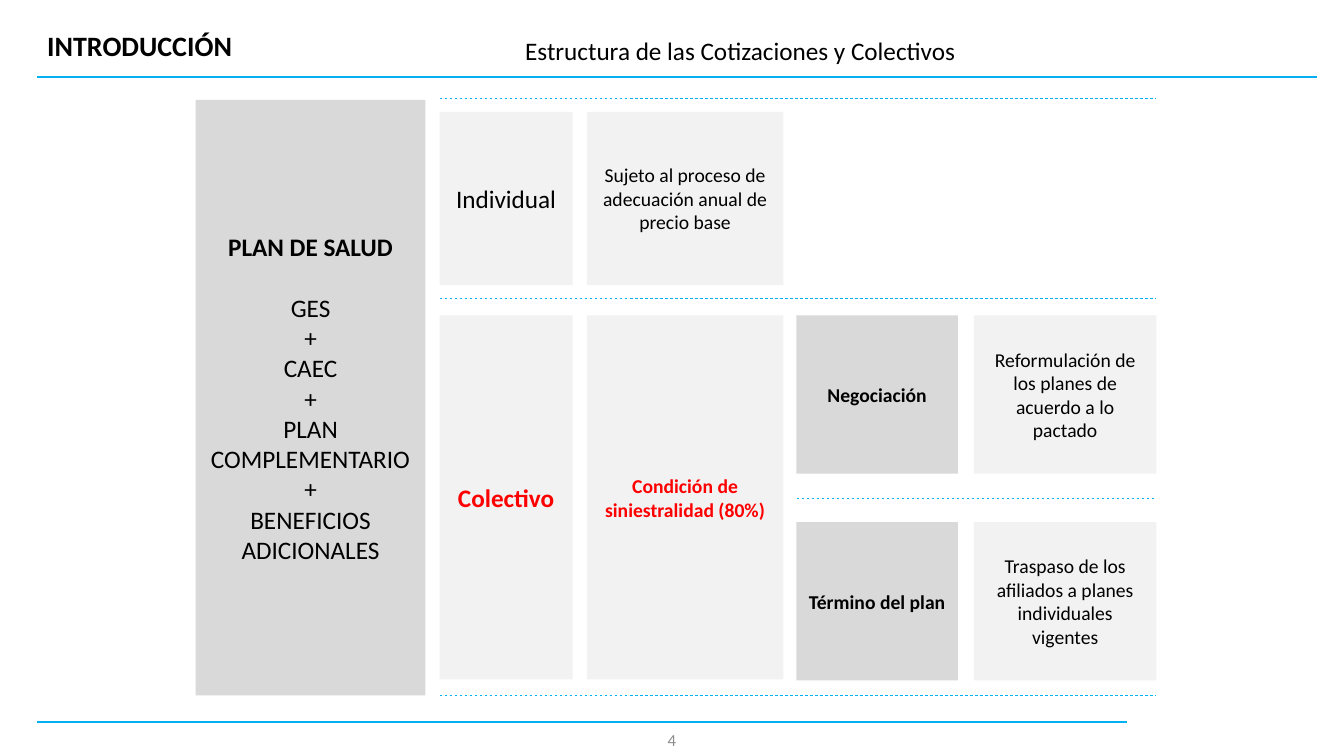
from dataclasses import dataclass

from lxml import etree
from pptx import Presentation
from pptx.dml.color import RGBColor
from pptx.enum.dml import MSO_LINE
from pptx.enum.shapes import MSO_CONNECTOR, MSO_SHAPE
from pptx.enum.text import MSO_ANCHOR, PP_ALIGN
from pptx.oxml.ns import qn
from pptx.slide import Slide
from pptx.text.text import TextFrame
from pptx.util import Inches, Pt

RECT = MSO_SHAPE.RECTANGLE
LINE = MSO_CONNECTOR.STRAIGHT
DASH = MSO_LINE.DASH
TOP, MID = MSO_ANCHOR.TOP, MSO_ANCHOR.MIDDLE
LEFT, MIDDLE = PP_ALIGN.LEFT, PP_ALIGN.CENTER
FONT = "Calibri"
COLORS = {"blue": "00B0F0", "black": "000000", "red": "FF0000",
          "mute": "8C8C8C", "dark": "D9D9D9", "light": "F2F2F2"}


@dataclass
class Label:
    text: str
    left: float
    top: float
    width: float
    height: float
    size: int = 14
    bold: bool = False
    color: str = "black"
    fill: str = "light"
    align: PP_ALIGN = MIDDLE
    anchor: MSO_ANCHOR = MID


@dataclass
class Rule:
    left: float
    right: float
    top: float
    width: float = 0.5
    dashed: bool = True


def paint(name: str) -> RGBColor:
    return RGBColor.from_string(COLORS[name])


def write(frame: TextFrame, label: Label) -> None:
    frame.text = label.text
    frame.word_wrap = True
    frame.vertical_anchor = label.anchor
    for para in frame.paragraphs:
        para.alignment = label.align
        for run in para.runs:
            run.font.name = FONT
            run.font.size = Pt(label.size)
            run.font.bold = label.bold
            run.font.color.rgb = paint(label.color)


def add_text(slide: Slide, label: Label) -> None:
    box = slide.shapes.add_textbox(Inches(label.left), Inches(label.top),
                                   Inches(label.width), Inches(label.height))
    write(box.text_frame, label)


def add_box(slide: Slide, label: Label) -> TextFrame:
    box = slide.shapes.add_shape(RECT, Inches(label.left), Inches(label.top),
                                 Inches(label.width), Inches(label.height))
    box.shadow.inherit = False
    box.fill.solid()
    box.fill.fore_color.rgb = paint(label.fill)
    box.line.fill.background()
    write(box.text_frame, label)
    return box.text_frame


def add_rule(slide: Slide, rule: Rule) -> None:
    line = slide.shapes.add_connector(LINE, Inches(rule.left), Inches(rule.top),
                                      Inches(rule.right), Inches(rule.top))
    line.line.color.rgb = paint("blue")
    line.line.width = Pt(rule.width)
    if rule.dashed:
        line.line.dash_style = DASH
    etree.SubElement(line._element.spPr, qn("a:effectLst"))


KIND, CAUSE, STEP, RESULT = (4.36, 1.32), (5.82, 1.95), (7.9, 1.6), (9.66, 1.81)
SOLO, GROUP, DEAL, CLOSE = (1.11, 1.72), (3.13, 3.61), (3.13, 1.57), (5.18, 1.57)
EDGE = RESULT[0] + RESULT[1]


def cell(text: str, col: tuple[float, float], row: tuple[float, float],
         size: int = 14, bold: bool = False, color: str = "black",
         fill: str = "light") -> Label:
    return Label(text, col[0], row[0], col[1], row[1], size, bold, color, fill)


PLAN = Label("PLAN DE SALUD\nGES\n+\nCAEC\n+\nPLAN COMPLEMENTARIO\n+\n"
             "BENEFICIOS ADICIONALES", 1.94, 0.99, 2.28, 5.91, 18, fill="dark")
CELLS = [
    cell("Individual", KIND, SOLO, 18),
    cell("Sujeto al proceso de adecuación anual de precio base", CAUSE, SOLO),
    cell("Colectivo", KIND, GROUP, 18, True, "red"),
    cell("Condición de siniestralidad (80%)", CAUSE, GROUP, 14, True, "red"),
    cell("Negociación", STEP, DEAL, bold=True, fill="dark"),
    cell("Reformulación de los planes de acuerdo a lo pactado", RESULT, DEAL),
    cell("Término del plan", STEP, CLOSE, bold=True, fill="dark"),
    cell("Traspaso de los afiliados a planes individuales vigentes", RESULT, CLOSE),
]
TEXTS = [
    Label("INTRODUCCIÓN", 0.37, 0.13, 12.3, 0.63, 20, True, align=LEFT),
    Label("Estructura de las Cotizaciones y Colectivos", 5.11, 0.3, 4.91, 0.4,
          18, align=LEFT, anchor=TOP),
    Label("4", 5.11, 7.14, 3.11, 0.4, 12, color="mute"),
]
RULES = [
    Rule(0.37, 13.06, 0.76, 1.5, False),
    Rule(0.37, 11.18, 7.16, 1.5, False),
    Rule(KIND[0], EDGE, 0.98),
    Rule(KIND[0], EDGE, 2.96),
    Rule(STEP[0], EDGE, 4.94),
    Rule(KIND[0], EDGE, 6.9),
]


def main() -> None:
    deck = Presentation()
    deck.slide_width, deck.slide_height = Inches(13.33), Inches(7.5)
    slide = deck.slides.add_slide(deck.slide_layouts[6])
    for rule in RULES:
        add_rule(slide, rule)
    for label in TEXTS:
        add_text(slide, label)
    plan = add_box(slide, PLAN)
    plan.paragraphs[0].runs[0].font.bold = True
    plan.paragraphs[1].space_before = Pt(22)
    for label in CELLS:
        add_box(slide, label)
    deck.save("out.pptx")


if __name__ == "__main__":
    main()
